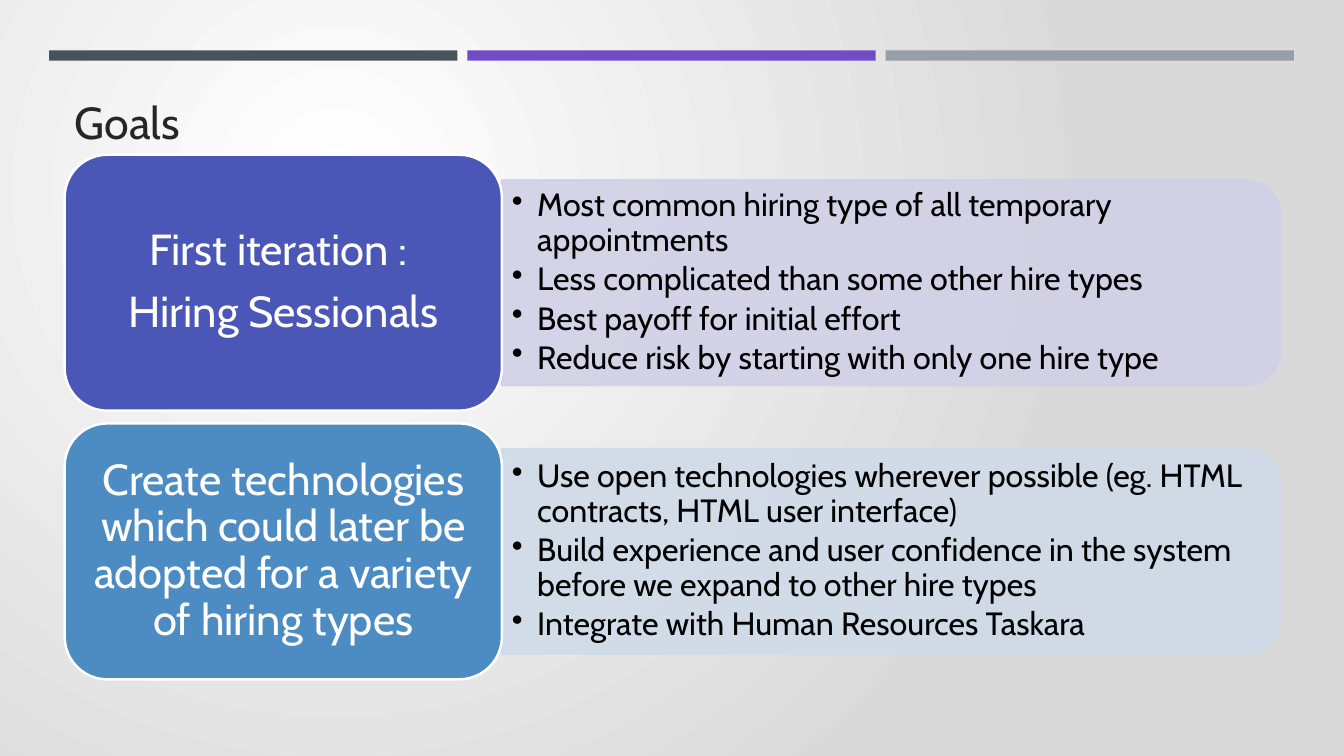
from dataclasses import dataclass

from lxml import etree
from pptx import Presentation
from pptx.dml.color import RGBColor
from pptx.enum import shapes, text
from pptx.oxml.ns import qn
from pptx.util import Cm, Pt

HUES = {
    "white": "FFFFFF", "grey": "D9D9D9", "ink": "262626", "black": "000000",
    "slate": "465359", "purple": "704DC3", "steel": "969FA7",
    "indigo": "4A57B7", "lilac": "D0D1E6", "blue": "4D8CC3", "sky": "D0DBE9",
}
FONT = "Cabin"
KINDS = shapes.MSO_SHAPE


@dataclass
class Goal:
    title: list[str]
    points: list[str]
    card: str
    pane: str


GOALS = [
    Goal(["First iteration : ", "Hiring Sessionals"],
         ["Most common hiring type of all temporary appointments",
          "Less complicated than some other hire types",
          "Best payoff for initial effort",
          "Reduce risk by starting with only one hire type"],
         "indigo", "lilac"),
    Goal(["Create technologies which could later be adopted for a variety of hiring types"],
         ["Use open technologies wherever possible (eg. HTML contracts, HTML user interface)",
          "Build experience and user confidence in the system before we expand to other hire types",
          "Integrate with Human Resources Taskara"],
         "blue", "sky"),
]


def rgb(hue: str) -> RGBColor:
    return RGBColor.from_string(HUES[hue])


def fade(part, share: int) -> None:
    """Set the opacity, in percent, of every colour in a shape's fill and line."""
    for tint in part._element.spPr.iter(qn("a:srgbClr")):
        etree.SubElement(tint, qn("a:alpha"), val=str(share * 1000))


def add_block(slide, kind, x: float, y: float, w: float, h: float,
              fill: str, line: str | None = None):
    part = slide.shapes.add_shape(kind, Cm(x), Cm(y), Cm(w), Cm(h))
    part.shadow.inherit = False
    part.fill.solid()
    part.fill.fore_color.rgb = rgb(fill)
    if line:
        part.line.color.rgb = rgb(line)
        part.line.width = Pt(1.75)
    else:
        part.line.fill.background()
    return part


def write(part, lines: list[str], *, size: float, hue: str, after: float = 0,
          align=text.PP_ALIGN.LEFT, anchor=text.MSO_ANCHOR.MIDDLE,
          pad: tuple[float, float] = (0.25, 0.13), bullet: bool = False) -> None:
    frame = part.text_frame
    frame.word_wrap = True
    frame.vertical_anchor = anchor
    frame.margin_left = frame.margin_right = Cm(pad[0])
    frame.margin_top = frame.margin_bottom = Cm(pad[1])
    for i, line in enumerate(lines):
        para = frame.add_paragraph() if i else frame.paragraphs[0]
        para.alignment = align
        para.line_spacing = 0.9
        para.space_after = Pt(after)
        run = para.add_run()
        run.text = line
        run.font.name = FONT
        run.font.size = Pt(size)
        run.font.color.rgb = rgb(hue)
        if bullet:
            props = para._p.get_or_add_pPr()
            props.set("marL", str(Cm(0.64)))
            props.set("indent", str(-Cm(0.64)))
            etree.SubElement(props, qn("a:buChar"), char="•")


def add_text(slide, x: float, y: float, w: float, h: float,
             lines: list[str], **style) -> None:
    box = slide.shapes.add_textbox(Cm(x), Cm(y), Cm(w), Cm(h))
    write(box, lines, **style)


def paint_back(slide) -> None:
    fill = slide.background.fill
    fill.gradient()
    for stop, hue, spot in zip(fill.gradient_stops, ("white", "grey"), (0, 1)):
        stop.color.rgb = rgb(hue)
        stop.position = spot
    grad = slide.element.find(".//" + qn("a:gradFill"))
    grad.remove(grad.find(qn("a:lin")))
    glow = etree.SubElement(grad, qn("a:path"), path="circle")
    etree.SubElement(glow, qn("a:fillToRect"),
                     l="50000", t="50000", r="100000", b="100000")


def add_goal(slide, goal: Goal, top: float) -> None:
    left, wide, high = 1.63, 11.02, 6.45
    edge, mid = left + wide, top + high / 2

    # Pane: a tall shape turned a quarter so its round end faces right
    span, depth = 19.61, 5.16
    pane = add_block(slide, KINDS.ROUND_2_SAME_RECTANGLE,
                     edge + (span - depth) / 2, mid - span / 2, depth, span,
                     goal.pane, goal.pane)
    pane.rotation = 90
    fade(pane, 90)
    add_text(slide, edge, mid - 2.33, 19.35, 4.66, goal.points,
             size=23, hue="black", after=3.2, bullet=True)

    # Card
    card = add_block(slide, KINDS.ROUNDED_RECTANGLE, left, top, wide, high,
                     goal.card, "white")
    write(card, goal.title, size=31, hue="white", after=10.5,
          align=text.PP_ALIGN.CENTER, pad=(0.33, 0.16))


def main() -> None:
    deck = Presentation()
    deck.slide_width, deck.slide_height = Cm(33.87), Cm(19.05)
    slide = deck.slides.add_slide(deck.slide_layouts[6])
    paint_back(slide)

    # Top bars
    for i, hue in enumerate(("slate", "purple", "steel")):
        add_block(slide, KINDS.RECTANGLE, 1.24 + i * 10.54, 1.27, 10.29, 0.26, hue)

    # Heading
    add_text(slide, 1.63, 1.96, 30.63, 1.93, ["Goals"], size=32, hue="ink",
             anchor=text.MSO_ANCHOR.BOTTOM)

    # Goals
    for i, goal in enumerate(GOALS):
        add_goal(slide, goal, 3.9 + i * 6.77)

    deck.save("out.pptx")


if __name__ == "__main__":
    main()
